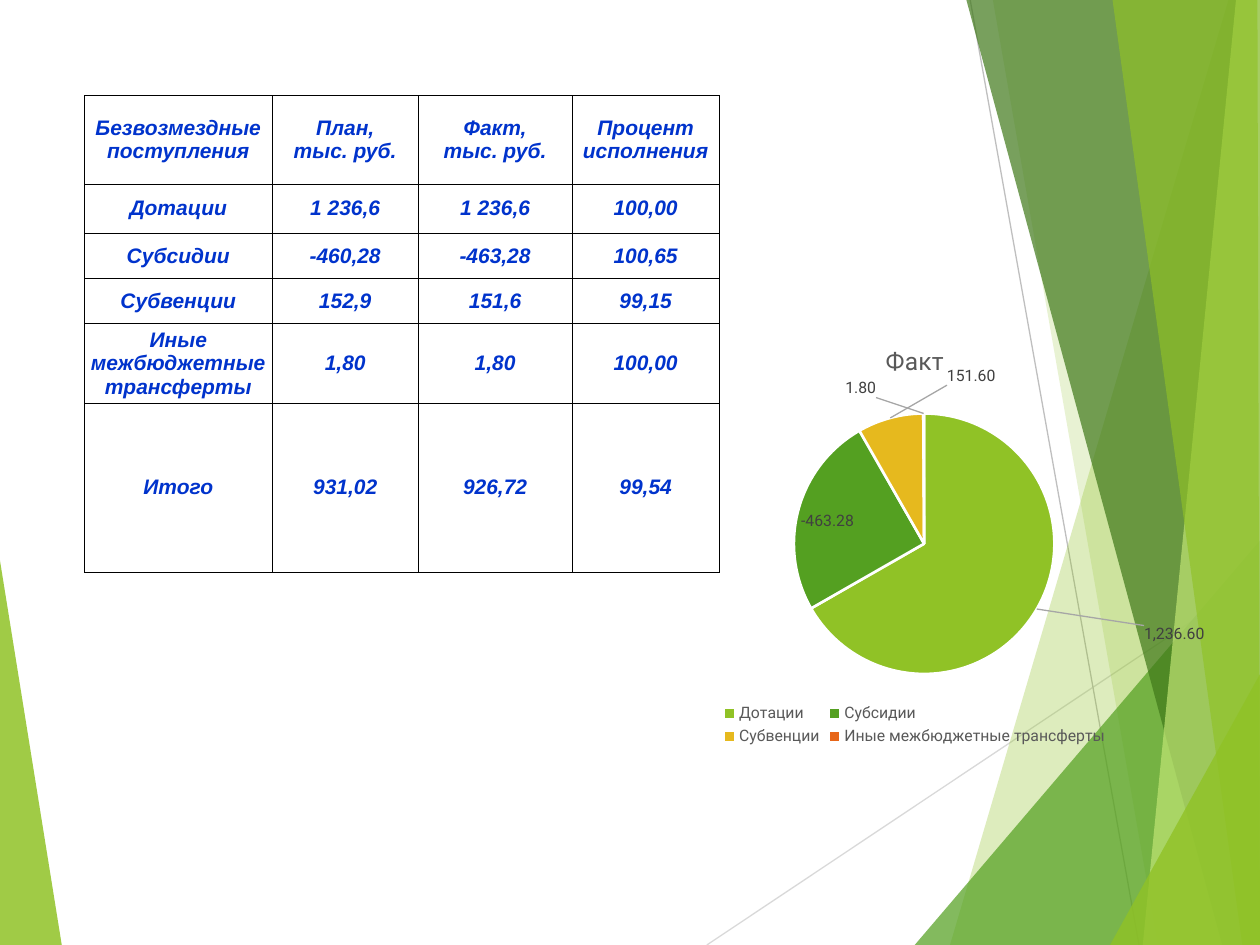
import pptx
import pptx.chart.data
import pptx.dml.color
import pptx.enum.chart
import pptx.enum.shapes
import pptx.enum.text
import pptx.oxml
import pptx.oxml.ns
import pptx.util
from lxml import etree
from pptx.util import Inches, Pt

COLORS = {
    "lime": "90C226", "green": "54A021", "forest": "3F7819", "pale": "C0E474",
    "gold": "E6B91E", "orange": "E76618", "white": "FFFFFF", "black": "000000",
    "blue": "0033CC", "silver": "BFBFBF", "mist": "D9D9D9", "leader": "A6A6A6",
    "gray": "595959", "label": "404040",
}
RIGHT_FACETS = [
    ([(9.75, 0), (7.54, 7.5), (10, 7.5), (10, 0)], "lime", 30),
    ([(7.88, 0), (9.19, 7.5), (10, 7.5), (10, 0)], "lime", 20),
    ([(7.26, 7.5), (10, 4.29), (10, 7.5)], "green", 72),
    ([(7.67, 0), (9.7, 7.5), (10, 7.5), (10, 0)], "forest", 70),
    ([(9.81, 0), (9.07, 7.5), (10, 7.5), (10, 0)], "pale", 70),
    ([(8.83, 0), (9.86, 7.5), (10, 7.5), (9.98, 0)], "lime", 65),
    ([(8.81, 7.5), (10, 5.35), (10, 7.5)], "lime", 80),
]
TABLE_ROWS = [
    ("Безвозмездные поступления", "План,\nтыс. руб.", "Факт,\nтыс. руб.", "Процент исполнения"),
    ("Дотации", "1 236,6", "1 236,6", "100,00"),
    ("Субсидии", "-460,28", "-463,28", "100,65"),
    ("Субвенции", "152,9", "151,6", "99,15"),
    ("Иные межбюджетные трансферты", "1,80", "1,80", "100,00"),
    ("Итого", "931,02", "926,72", "99,54"),
]
COLUMN_WIDTHS = [1.49, 1.16, 1.22, 1.17]
ROW_HEIGHTS = [0.7, 0.39, 0.36, 0.36, 0.63, 1.34]
FACT_VALUES = [1236.6, -463.28, 151.6, 1.8]
SLICE_COLORS = ["lime", "green", "gold", "orange"]
LABEL_SHIFTS = {0: (0.16, 0.03), 2: (0.17, -0.06), 3: (-0.1, -0.02)}


def rgb(name):
    return pptx.dml.color.RGBColor.from_string(COLORS[name])


def style_font(font, face, size, color, bold=False, italic=False):
    font.name = face
    font.size = Pt(size)
    font.bold = bold
    font.italic = italic
    font.color.rgb = rgb(color)


def add_facet(page, points, color, opacity):
    corners = [(Inches(x), Inches(y)) for x, y in points]
    builder = page.shapes.build_freeform(*corners[0])
    builder.add_line_segments(corners[1:], close=True)
    facet = builder.convert_to_shape()
    facet.shadow.inherit = False
    facet.fill.solid()
    facet.fill.fore_color.rgb = rgb(color)
    facet.line.fill.background()
    tint = facet._element.spPr.find(".//" + pptx.oxml.ns.qn("a:srgbClr"))
    etree.SubElement(tint, pptx.oxml.ns.qn("a:alpha"), val=str(opacity * 1000))


def add_line(page, start, end, color):
    ends = [Inches(value) for value in (*start, *end)]
    line = page.shapes.add_connector(pptx.enum.shapes.MSO_CONNECTOR.STRAIGHT, *ends)
    line.line.color.rgb = rgb(color)
    line.line.width = Pt(0.75)
    etree.SubElement(line._element.spPr, pptx.oxml.ns.qn("a:effectLst"))


def add_borders(cell):
    properties = cell._tc.get_or_add_tcPr()
    for position, side in enumerate(("lnL", "lnR", "lnT", "lnB")):
        properties.insert(position, pptx.oxml.parse_xml(
            f'<a:{side} {pptx.oxml.ns.nsdecls("a")} w="{Pt(0.5)}"><a:solidFill>'
            f'<a:srgbClr val="{COLORS["black"]}"/></a:solidFill></a:{side}>'))


def fill_cell(cell, text):
    cell.margin_left = cell.margin_right = cell.margin_top = cell.margin_bottom = 0
    cell.vertical_anchor = pptx.enum.text.MSO_ANCHOR.MIDDLE
    cell.fill.background()
    cell.text_frame.text = text
    for para in cell.text_frame.paragraphs:
        para.alignment = pptx.enum.text.PP_ALIGN.CENTER
        for span in para.runs:
            style_font(span.font, "Arial", 12, "blue", True, True)
    add_borders(cell)


def add_income_table(page):
    table = page.shapes.add_table(
        len(ROW_HEIGHTS), len(COLUMN_WIDTHS), Inches(0.67), Inches(0.76),
        Inches(sum(COLUMN_WIDTHS)), Inches(sum(ROW_HEIGHTS))).table
    table.first_row = table.horz_banding = False
    for column, width in zip(table.columns, COLUMN_WIDTHS):
        column.width = Inches(width)
    for row, height, texts in zip(table.rows, ROW_HEIGHTS, TABLE_ROWS):
        row.height = Inches(height)
        for cell, text in zip(row.cells, texts):
            fill_cell(cell, text)


def make_layout(x, y, extra=""):
    return pptx.oxml.parse_xml(
        f'<c:layout {pptx.oxml.ns.nsdecls("c")}><c:manualLayout>{extra}'
        f'<c:x val="{x}"/><c:y val="{y}"/></c:manualLayout></c:layout>')


def place_plot(chart):
    area = chart._chartSpace.chart.plotArea
    for layout in area.findall(pptx.oxml.ns.qn("c:layout")):
        area.remove(layout)
    layout = make_layout(
        0.11, 0.21,
        '<c:layoutTarget val="inner"/><c:xMode val="edge"/><c:yMode val="edge"/>')
    for name, value in (("c:w", "0.81"), ("c:h", "0.61")):
        etree.SubElement(layout[0], pptx.oxml.ns.qn(name), val=value)
    area.insert(0, layout)


def style_labels(series):
    best_fit = pptx.enum.chart.XL_LABEL_POSITION.BEST_FIT
    labels = series.data_labels
    labels.show_value = True
    labels.number_format = "#,##0.00"
    labels.number_format_is_linked = False
    labels.position = best_fit
    style_font(labels.font, "Roboto", 9, "label")
    for index in LABEL_SHIFTS:
        label = series.points[index].data_label
        style_font(label.font, "Roboto", 9, "label")
        label.position = best_fit
    for marker in series._element.xpath("c:dLbls/c:dLbl/c:idx"):
        marker.addnext(make_layout(*LABEL_SHIFTS[int(marker.get("val"))]))
    for switch in series._element.xpath("c:dLbls/c:showLeaderLines"):
        switch.set("val", "1")
        switch.addnext(pptx.oxml.parse_xml(
            f'<c:leaderLines {pptx.oxml.ns.nsdecls("c", "a")}><c:spPr><a:ln w="{Pt(0.75)}">'
            f'<a:solidFill><a:srgbClr val="{COLORS["leader"]}"/></a:solidFill>'
            f'</a:ln></c:spPr></c:leaderLines>'))


def add_fact_chart(page):
    data = pptx.chart.data.CategoryChartData(number_format="#,##0.00")
    data.categories = [row[0] for row in TABLE_ROWS[1:5]]
    data.add_series("Факт", FACT_VALUES)
    chart = page.shapes.add_chart(
        pptx.enum.chart.XL_CHART_TYPE.PIE, Inches(4.76), Inches(2.57),
        Inches(5), Inches(3.39), data).chart
    style_font(chart.font, "Roboto", 10, "black")
    chart.has_title = True
    chart.chart_title.text_frame.text = "Факт"
    style_font(chart.chart_title.text_frame.paragraphs[0].runs[0].font, "Roboto", 14, "gray")
    chart.has_legend = True
    chart.legend.position = pptx.enum.chart.XL_LEGEND_POSITION.BOTTOM
    chart.legend.include_in_layout = False
    style_font(chart.legend.font, "Roboto", 9, "gray")
    plot = chart.plots[0]
    plot.vary_by_categories = True
    series = plot.series[0]
    for index, color in enumerate(SLICE_COLORS):
        slice_format = series.points[index].format
        slice_format.fill.solid()
        slice_format.fill.fore_color.rgb = rgb(color)
        slice_format.line.color.rgb = rgb("white")
        slice_format.line.width = Pt(1.5)
    style_labels(series)
    place_plot(chart)


def main():
    deck = pptx.Presentation()
    deck.slide_width, deck.slide_height = Inches(10), Inches(7.5)
    page = deck.slides.add_slide(deck.slide_layouts[6])
    add_facet(page, [(0, 4.45), (0.49, 7.5), (0, 7.5)], "lime", 85)
    add_line(page, (5.61, 7.5), (10, 4.57), "mist")
    add_line(page, (7.7, 0), (9.04, 7.5), "silver")
    for points, color, opacity in RIGHT_FACETS:
        add_facet(page, points, color, opacity)
    add_income_table(page)
    add_fact_chart(page)
    deck.save("out.pptx")


if __name__ == "__main__":
    main()
